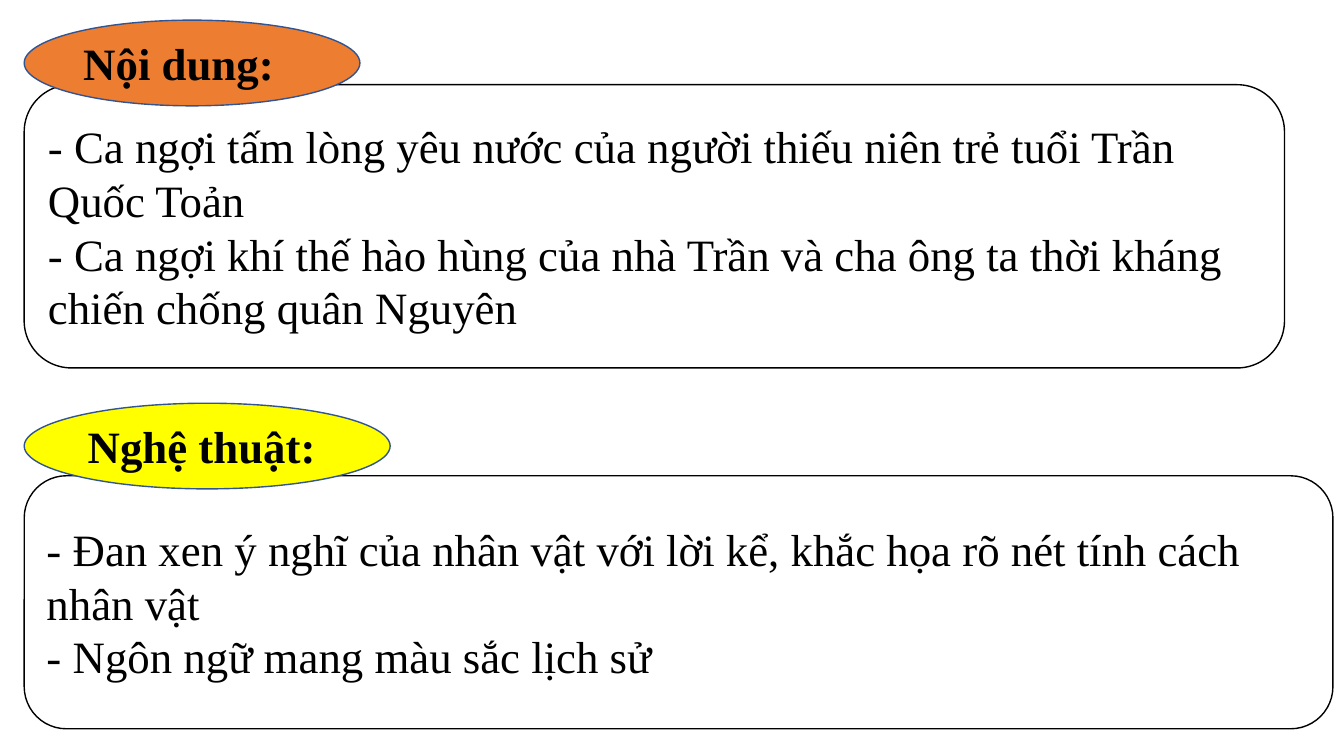
from pptx import Presentation
from pptx.dml.color import RGBColor
from pptx.enum.shapes import MSO_SHAPE
from pptx.enum.text import MSO_ANCHOR, PP_ALIGN
from pptx.util import Inches, Pt

ROUNDED, OVAL = MSO_SHAPE.ROUNDED_RECTANGLE, MSO_SHAPE.OVAL
MIDDLE, LEFT = MSO_ANCHOR.MIDDLE, PP_ALIGN.LEFT

COLORS = {
    "text": "000000",
    "panel": "FFFFFF",
    "panel_line": "000000",
    "content": "ED7D31",
    "art": "FFFF00",
    "label_line": "325491",
}
FONT = "Times New Roman"
LABEL_HEIGHT = 0.85


def color(name):
    return RGBColor.from_string(COLORS[name])


def add_text_shape(slide, kind, box, fill, line, lines, bold=False):
    """Draw an outlined shape holding left-aligned lines of text."""
    shape = slide.shapes.add_shape(kind, *(Inches(length) for length in box))
    shape.shadow.inherit = False
    shape.fill.solid()
    shape.fill.fore_color.rgb = color(fill)
    shape.line.color.rgb = color(line)
    shape.line.width = Pt(1)

    frame = shape.text_frame
    frame.word_wrap = True
    frame.vertical_anchor = MIDDLE
    for index, text in enumerate(lines):
        paragraph = frame.add_paragraph() if index else frame.paragraphs[0]
        paragraph.alignment = LEFT
        run = paragraph.add_run()
        run.text = text
        run.font.name = FONT
        run.font.size = Pt(32)
        run.font.bold = bold
        run.font.color.rgb = color("text")


def add_section(slide, box, panel_offset, label_width, fill, heading, points):
    """Draw a panel of points with its oval heading over the top-left corner."""
    left, top, width, height = box
    panel = (left, top + panel_offset, width, height - panel_offset)
    add_text_shape(slide, ROUNDED, panel, "panel", "panel_line", points)
    label = (left, top, label_width, LABEL_HEIGHT)
    add_text_shape(slide, OVAL, label, fill, "label_line", [heading], bold=True)


def main():
    prs = Presentation()
    prs.slide_width, prs.slide_height = Inches(13.33), Inches(7.5)
    slide = prs.slides.add_slide(prs.slide_layouts[6])

    # Content of the story
    add_section(slide, (0.24, 0.2, 12.5, 3.45), 0.64, 3.33, "content", "Nội dung:", [
        "- Ca ngợi tấm lòng yêu nước của người thiếu niên trẻ tuổi Trần Quốc Toản",
        "- Ca ngợi khí thế hào hùng của nhà Trần và cha ông ta thời kháng chiến "
        "chống quân Nguyên",
    ])

    # Artistic features
    add_section(slide, (0.24, 4, 12.98, 3.23), 0.72, 3.63, "art", "Nghệ thuật:", [
        "- Đan xen ý nghĩ của nhân vật với lời kể, khắc họa rõ nét tính cách nhân vật",
        "- Ngôn ngữ mang màu sắc lịch sử",
    ])

    prs.save("out.pptx")


if __name__ == "__main__":
    main()
